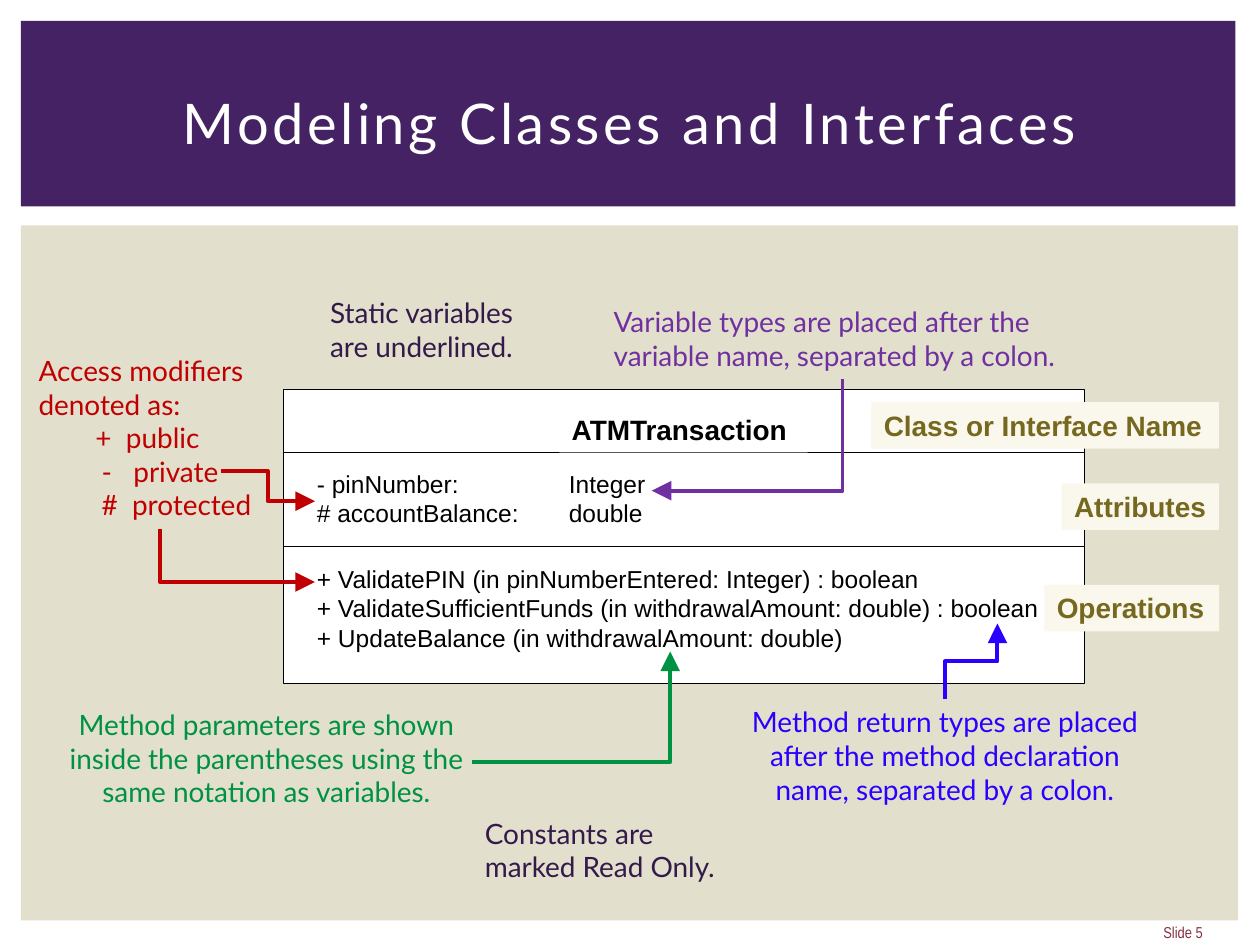
from lxml.etree import SubElement
from pptx import Presentation
from pptx.dml.color import RGBColor
from pptx.enum.shapes import MSO_CONNECTOR, MSO_SHAPE
from pptx.enum.text import MSO_ANCHOR, PP_ALIGN
from pptx.oxml.ns import qn
from pptx.util import Pt

COLORS = {
    "panel": "E2DFCC", "banner": "452264", "white": "FFFFFF", "black": "000000",
    "tag": "FAF7EC", "tag text": "76681E", "footer": "853143", "access": "C00000",
    "parameters": "009242", "types": "7030A0", "returns": "2A00FF", "note": "341A4B",
}
LEFT, CENTER, RIGHT = PP_ALIGN.LEFT, PP_ALIGN.CENTER, PP_ALIGN.RIGHT


def rgb(name):
    return RGBColor.from_string(COLORS[name])


def add_box(place, lines=(), color="black", font="Lato", size=16, fill=None,
            outline=False, bold=False, align=LEFT, anchor=MSO_ANCHOR.TOP, wrap=True):
    """Add a rectangle, filled or clear, holding one paragraph per line."""
    left, top, width, height = (Pt(value) for value in place)
    if fill:
        box = page.shapes.add_shape(MSO_SHAPE.RECTANGLE, left, top, width, height)
        box.shadow.inherit = False
        box.fill.solid()
        box.fill.fore_color.rgb = rgb(fill)
        if outline:
            box.line.color.rgb = rgb("black")
            box.line.width = Pt(0.75)
        else:
            box.line.fill.background()
    else:
        box = page.shapes.add_textbox(left, top, width, height)
    frame = box.text_frame
    frame.word_wrap = wrap
    frame.vertical_anchor = anchor
    for index, line in enumerate(lines):
        para = frame.paragraphs[0] if index == 0 else frame.add_paragraph()
        para.text = line
        para.alignment = align
        para.font.name = font
        para.font.size = Pt(size)
        para.font.bold = bold
        para.font.color.rgb = rgb(color)
    return box


deck = Presentation()
deck.slide_width, deck.slide_height = Pt(720), Pt(540)
page = deck.slides.add_slide(deck.slide_layouts[6])

# Background, title and slide number
add_box((12, 128.8, 695.5, 397.2), fill="panel")
add_box((12, 12, 694, 106), fill="banner")
add_box((648.4, 522, 46, 21.6), ["Slide 5"], "footer", "Arial Narrow", 9,
        align=RIGHT, anchor=MSO_ANCHOR.MIDDLE)
title = add_box((30, 28.4, 660, 82.8), ["Modeling Classes and Interfaces"], "white",
                size=32, align=CENTER, anchor=MSO_ANCHOR.MIDDLE)
title.text_frame.paragraphs[0].runs[0].font._element.set("spc", "200")

# Class diagram
add_box((162, 222.6, 457.7, 168), fill="white", outline=True)
add_box((162, 258.6, 457.7, 53.7), fill="white", outline=True)
add_box((319.6, 232, 142, 26.6), ["ATMTransaction"], font="Arial", fill="white",
        bold=True, wrap=False)
attributes = add_box((174, 264.4, 207.5, 41), ["- pinNumber:\tInteger", "# accountBalance:\tdouble"],
                     font="Arial", size=14, fill="white", wrap=False)
for para in attributes.text_frame.paragraphs:
    tabs = para._p.get_or_add_pPr().makeelement(qn("a:tabLst"))
    para._p.pPr.insert_element_before(tabs, "a:defRPr", "a:extLst")
    tab = SubElement(tabs, qn("a:tab"))
    tab.set("pos", str(Pt(144)))
    tab.set("algn", "l")
add_box((174, 318.6, 437.8, 58.2), [
    "+ ValidatePIN (in pinNumberEntered: Integer) : boolean",
    "+ ValidateSufficientFunds (in withdrawalAmount: double) : boolean",
    "+ UpdateBalance (in withdrawalAmount: double)",
], font="Arial", size=14, fill="white", wrap=False)

# Section tags share a right edge
TAG_RIGHT = 696.6
for label, top, width in [
    ("Class or Interface Name", 229.8, 198.6),
    ("Attributes", 276.3, 89.9),
    ("Operations", 334.2, 99.8),
]:
    add_box((TAG_RIGHT - width, top, width, 26.6), [label], "tag text", "Arial",
            fill="tag", bold=True, wrap=False)

# Explanations
access = add_box((15, 198.5, 153.4, 104.4), [
    "Access modifiers denoted as:", "+  public", "-   private", "#  protected",
], "access")
for para, indent in zip(access.text_frame.paragraphs[1:], (32.5, 36, 36)):
    para._p.get_or_add_pPr().set("marL", str(Pt(indent)))

for place, text, color, align in [
    ((17.3, 400.8, 270, 65.4), "Method parameters are shown inside the parentheses using "
     "the same notation as variables.", "parameters", CENTER),
    ((343.6, 170.6, 275, 46), "Variable types are placed after the variable name, "
     "separated by a colon.", "types", LEFT),
    ((420, 399.3, 240, 65.4), "Method return types are placed after the method declaration "
     "name, separated by a colon.", "returns", CENTER),
    ((181.6, 165.6, 150, 46), "Static variables\vare underlined.", "note", LEFT),
    ((270, 462.8, 155.5, 46), "Constants are\vmarked Read Only.", "note", LEFT),
]:
    add_box(place, [text], color, align=align)

# Elbow arrows: start, end, colour, bends, turn in degrees, flips
for (x1, y1), (x2, y2), color, bends, turn, flips in [
    ((91.4, 302.6), (180, 332.6), "access", 1, 270, "h"),
    ((126, 269.2), (180, 286.4), "access", 2, 0, ""),
    ((270, 435.6), (383, 372.4), "parameters", 1, 0, "v"),
    ((481.4, 216.8), (372.4, 280.4), "types", 1, 90, ""),
    ((540, 399.6), (570, 356.4), "returns", 2, 90, "hv"),
]:
    width, height = abs(x2 - x1), abs(y2 - y1)
    if turn:
        width, height = height, width
    left, top = (x1 + x2 - width) / 2, (y1 + y2 - height) / 2
    begin_x, end_x = (left + width, left) if "h" in flips else (left, left + width)
    begin_y, end_y = (top + height, top) if "v" in flips else (top, top + height)
    arrow = page.shapes.add_connector(MSO_CONNECTOR.ELBOW, Pt(begin_x), Pt(begin_y),
                                      Pt(end_x), Pt(end_y))
    arrow.line.color.rgb = rgb(color)
    arrow.line.width = Pt(2.25)
    properties = arrow._element.spPr
    properties.find(qn("a:xfrm")).set("rot", str(turn * 60000))
    properties.find(qn("a:prstGeom")).set("prst", f"bentConnector{bends + 1}")
    head = SubElement(properties.find(qn("a:ln")), qn("a:tailEnd"))
    for name, value in (("type", "triangle"), ("w", "lg"), ("len", "lg")):
        head.set(name, value)
    SubElement(properties, qn("a:effectLst"))

deck.save("out.pptx")
